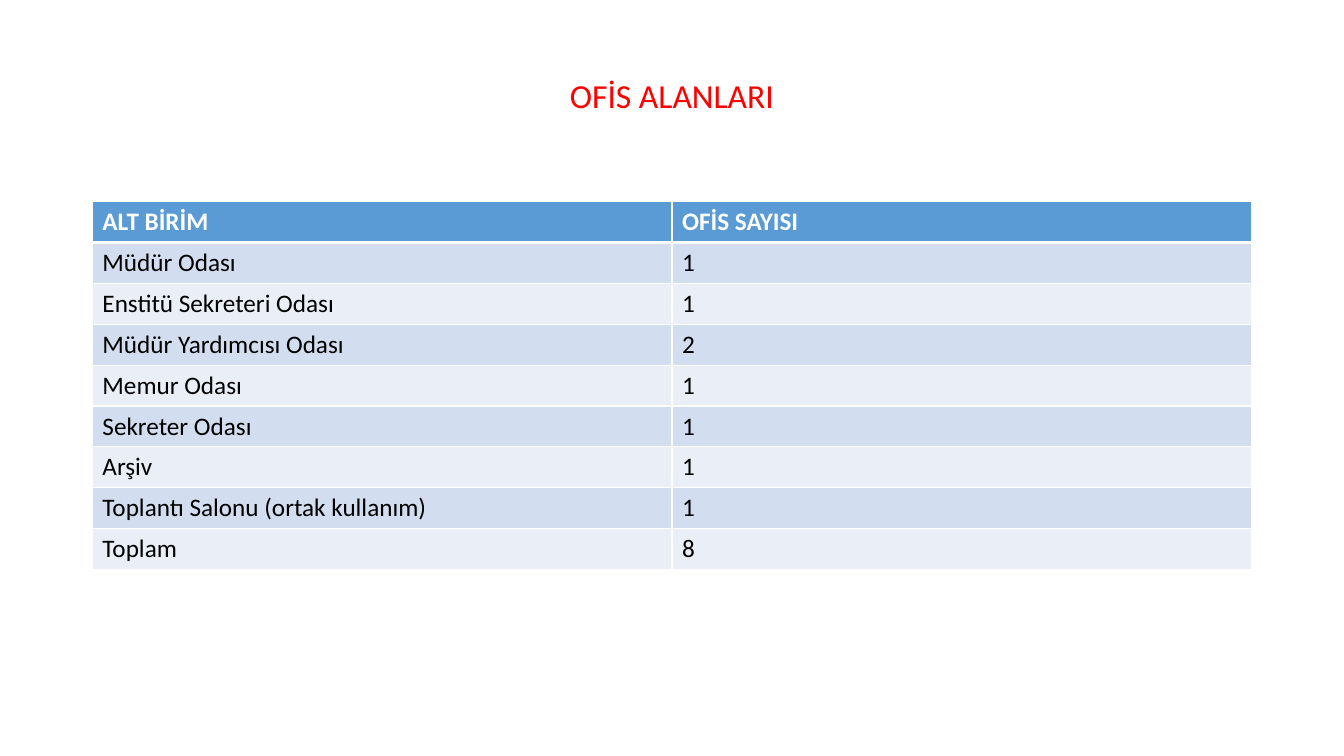
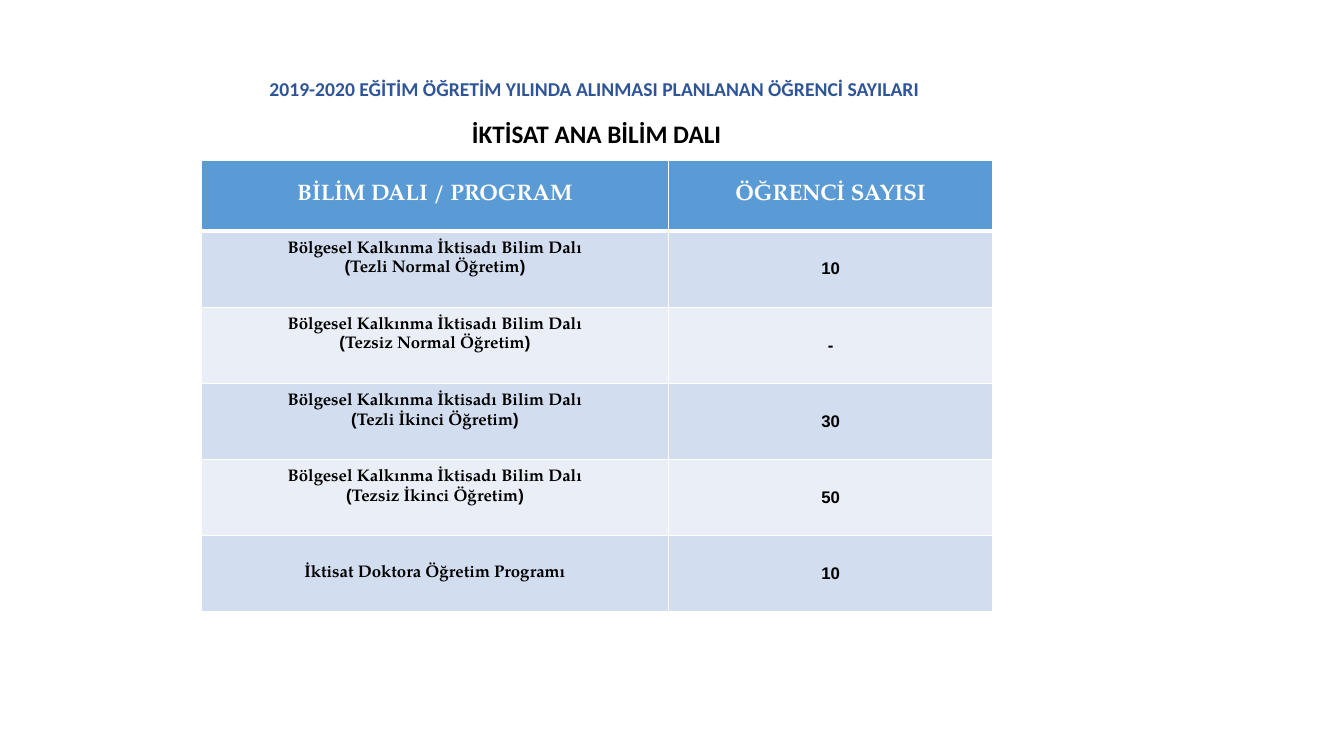
from pptx import Presentation
from pptx.dml.color import RGBColor
from pptx.enum.text import MSO_ANCHOR, PP_ALIGN
from pptx.oxml import parse_xml
from pptx.oxml.ns import nsdecls
from pptx.util import Pt

# Shared look
COLORS = {
    "red": "FF0000", "navy": "2F5597", "black": "000000", "white": "FFFFFF",
    "header": "5B9BD5", "band_dark": "D2DEEF", "band_light": "EAEFF7",
}
SANS, SERIF = "Calibri", "TeX Gyre Pagella"

# Content
OFFICES = [
    ("ALT BİRİM", "OFİS SAYISI"),
    ("Müdür Odası", "1"),
    ("Enstitü Sekreteri Odası", "1"),
    ("Müdür Yardımcısı Odası", "2"),
    ("Memur Odası", "1"),
    ("Sekreter Odası", "1"),
    ("Arşiv", "1"),
    ("Toplantı Salonu (ortak kullanım)", "1"),
    ("Toplam", "8"),
]
REGIONAL = "Bölgesel Kalkınma İktisadı Bilim Dalı"
PROGRAMS = [
    ("BİLİM DALI / PROGRAM", "ÖĞRENCİ SAYISI"),
    (f"{REGIONAL}\n(Tezli Normal Öğretim)", "10"),
    (f"{REGIONAL}\n(Tezsiz Normal Öğretim)", "-"),
    (f"{REGIONAL}\n(Tezli İkinci Öğretim)", "30"),
    (f"{REGIONAL}\n(Tezsiz İkinci Öğretim)", "50"),
    ("İktisat Doktora Öğretim Programı", "10"),
]


def style_text(frame, size, color, bold, font=SANS, align=PP_ALIGN.CENTER):
    for para in frame.paragraphs:
        para.alignment = align
        for span in para.runs:
            span.font.name, span.font.size, span.font.bold = font, Pt(size), bold
            span.font.color.rgb = RGBColor.from_string(COLORS[color])


def add_heading(page, text, place, size, color, bold=True, wrap=True):
    box = page.shapes.add_textbox(*map(Pt, place))
    frame = box.text_frame
    frame.word_wrap = wrap
    frame.vertical_anchor = MSO_ANCHOR.MIDDLE
    frame.text = text
    style_text(frame, size, color, bold)


def add_borders(cell, top, bottom):
    """White cell edges; top and bottom widths in points."""
    properties = cell._tc.get_or_add_tcPr()
    for side, width in (("L", 1), ("R", 1), ("T", top), ("B", bottom)):
        properties.append(parse_xml(
            f'<a:ln{side} {nsdecls("a")} w="{Pt(width)}"><a:solidFill>'
            f'<a:srgbClr val="{COLORS["white"]}"/></a:solidFill></a:ln{side}>'))


def set_right_to_left(frame):
    """Right-to-left paragraphs, whose digits are set in Arial."""
    for para in frame.paragraphs:
        para._p.get_or_add_pPr().set("rtl", "1")
        for span in para.runs:
            span._r.get_or_add_rPr().append(
                parse_xml(f'<a:cs {nsdecls("a")} typeface="Arial"/>'))


def add_grid(page, rows, left, top, widths, heights):
    """Banded table; heights are those of the header and of a body row."""
    row_heights = [heights[0]] + [heights[1]] * (len(rows) - 1)
    table = page.shapes.add_table(
        len(rows), len(widths), Pt(left), Pt(top),
        Pt(sum(widths)), Pt(sum(row_heights))).table
    for column, width in zip(table.columns, widths):
        column.width = Pt(width)
    for i, values in enumerate(rows):
        table.rows[i].height = Pt(row_heights[i])
        fill = "header" if i == 0 else ("band_light", "band_dark")[i % 2]
        for j, value in enumerate(values):
            cell = table.cell(i, j)
            add_borders(cell, top=3 if i == 1 else 1, bottom=3 if i == 0 else 1)
            cell.fill.solid()
            cell.fill.fore_color.rgb = RGBColor.from_string(COLORS[fill])
            cell.text_frame.text = value
    return table


deck = Presentation()
deck.slide_width, deck.slide_height = Pt(960), Pt(540)
blank = deck.slide_layouts[6]

# Office spaces
page = deck.slides.add_slide(blank)
add_heading(page, "OFİS ALANLARI", (66, 28.8, 828, 78.5), 24, "red", bold=False)
table = add_grid(page, OFFICES, 66, 144, (414, 414), (29.2, 29.2))
for i in range(len(OFFICES)):
    for cell in table.rows[i].cells:
        style_text(cell.text_frame, 18, "black" if i else "white", i == 0,
                   align=PP_ALIGN.LEFT)

# Planned student numbers
page = deck.slides.add_slide(blank)
add_heading(page, "2019-2020 EĞİTİM ÖĞRETİM YILINDA ALINMASI PLANLANAN ÖĞRENCİ SAYILARI",
            (171, 51, 507.6, 24.5), 14, "navy")
add_heading(page, "İKTİSAT ANA BİLİM DALI", (329, 80.8, 194.4, 29), 18, "black", wrap=False)
table = add_grid(page, PROGRAMS, 144, 114.6, (333.4, 231.8), (50.4, 54.4))
for i in range(len(PROGRAMS)):
    for j, cell in enumerate(table.rows[i].cells):
        frame = cell.text_frame
        cell.vertical_anchor = MSO_ANCHOR.MIDDLE
        cell.margin_left = cell.margin_right = Pt(10.8)
        # Two-line names sit a little above the middle
        if len(frame.paragraphs) > 1:
            cell.margin_bottom = Pt(18)
        style_text(frame, 12 if i else 16, "black" if i else "white", True, SERIF)
        if i or j:
            set_right_to_left(frame)

deck.save("out.pptx")
